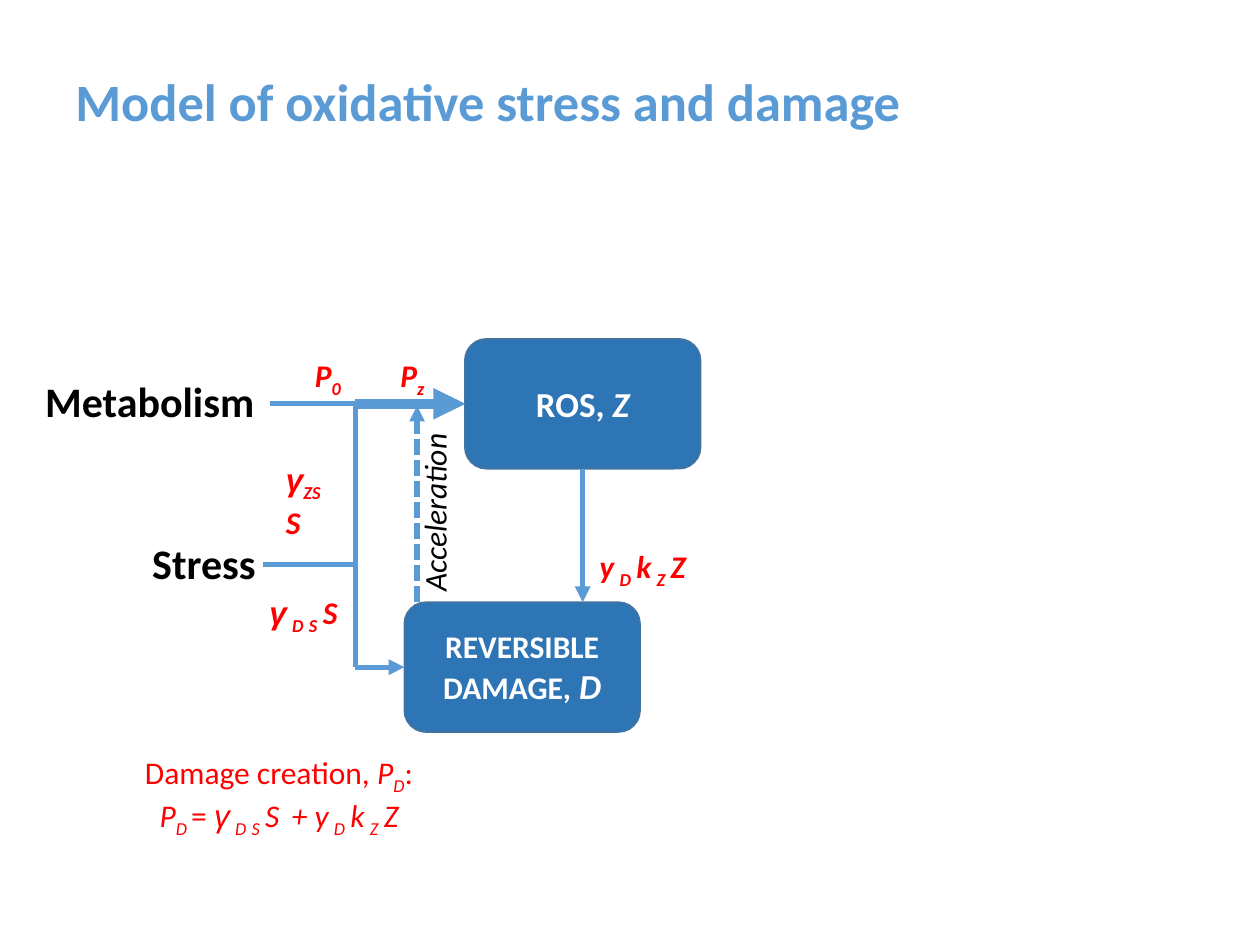
from dataclasses import dataclass, replace
from typing import Optional

from lxml.etree import SubElement
from pptx import Presentation
from pptx.dml.color import RGBColor
from pptx.enum.dml import MSO_LINE
from pptx.enum.shapes import MSO_CONNECTOR, MSO_SHAPE
from pptx.enum.text import MSO_ANCHOR, MSO_AUTO_SIZE, PP_ALIGN
from pptx.oxml.ns import qn
from pptx.shapes.autoshape import Shape
from pptx.shapes.connector import Connector
from pptx.text.text import TextFrame
from pptx.util import Inches, Pt

SKY = RGBColor(0x5B, 0x9B, 0xD5)
BLUE = RGBColor(0x2E, 0x75, 0xB6)
EDGE = RGBColor(0x43, 0x73, 0x9E)
RED = RGBColor(0xFF, 0x00, 0x00)
BLACK = RGBColor(0x00, 0x00, 0x00)
WHITE = RGBColor(0xFF, 0xFF, 0xFF)

presentation = Presentation()
presentation.slide_width, presentation.slide_height = Inches(10), Inches(7.5)
COLUMN = presentation.slide_width / 100
ROW = presentation.slide_height / 75
slide = presentation.slides.add_slide(presentation.slide_layouts[6])

TOP, LEFT, BOTTOM = 0, 1, 2
POOL_COLUMNS, POOL_ROWS = 18.7, 10.3


@dataclass(frozen=True)
class Style:
    color: RGBColor
    size: float = 18
    bold: bool = False
    italic: bool = False
    font: str = "Calibri"
    baseline: int = 0
    spacing: float = 0


@dataclass(frozen=True)
class Run:
    text: str
    style: Style


Line = list[Run]


@dataclass(frozen=True)
class Label:
    """A text box placed in grid columns and rows."""
    column: float
    row: float
    columns: float
    rows: float
    lines: list[Line]
    centred: bool = False
    wrapped: bool = False
    rotation: float = 0


@dataclass(frozen=True)
class Flow:
    """A straight line between grid points, optionally joined to a pool's side."""
    start: tuple[float, float]
    end: tuple[float, float]
    arrow: bool = False
    width: float = 3
    dashed: bool = False
    source: Optional[tuple[Shape, int]] = None
    target: Optional[tuple[Shape, int]] = None


def write(frame: TextFrame, lines: list[Line], centred: bool) -> None:
    for index, line in enumerate(lines):
        paragraph = frame.paragraphs[0] if index == 0 else frame.add_paragraph()
        paragraph.alignment = PP_ALIGN.CENTER if centred else PP_ALIGN.LEFT
        for part in line:
            run, style = paragraph.add_run(), part.style
            run.text = part.text
            run.font.name, run.font.size = style.font, Pt(style.size)
            run.font.bold, run.font.italic = style.bold, style.italic
            run.font.color.rgb = style.color
            properties = run.font._element
            if style.baseline:
                properties.set("baseline", str(style.baseline * 1000))
            if style.spacing:
                properties.set("spc", str(int(style.spacing * 100)))


def add_label(label: Label) -> Shape:
    box = slide.shapes.add_textbox(
        int(label.column * COLUMN), int(label.row * ROW),
        int(label.columns * COLUMN), int(label.rows * ROW))
    box.rotation = label.rotation
    box.text_frame.word_wrap = label.wrapped
    box.text_frame.auto_size = MSO_AUTO_SIZE.SHAPE_TO_FIT_TEXT
    write(box.text_frame, label.lines, label.centred)
    return box


def add_pool(column: float, row: float, line: Line) -> Shape:
    pool = slide.shapes.add_shape(
        MSO_SHAPE.ROUNDED_RECTANGLE, int(column * COLUMN), int(row * ROW),
        int(POOL_COLUMNS * COLUMN), int(POOL_ROWS * ROW))
    pool.shadow.inherit = False
    pool.fill.solid()
    pool.fill.fore_color.rgb = BLUE
    pool.line.color.rgb = EDGE
    pool.line.width = Pt(1)
    pool.text_frame.word_wrap = True
    pool.text_frame.vertical_anchor = MSO_ANCHOR.MIDDLE
    write(pool.text_frame, [line], centred=True)
    return pool


def add_flow(flow: Flow) -> Connector:
    (x1, y1), (x2, y2) = flow.start, flow.end
    connector = slide.shapes.add_connector(
        MSO_CONNECTOR.STRAIGHT, int(x1 * COLUMN), int(y1 * ROW),
        int(x2 * COLUMN), int(y2 * ROW))
    if flow.source:
        connector.begin_connect(*flow.source)
    if flow.target:
        connector.end_connect(*flow.target)
    connector.line.color.rgb = SKY
    connector.line.width = Pt(flow.width)
    if flow.dashed:
        connector.line.dash_style = MSO_LINE.SQUARE_DOT
    if flow.arrow:
        SubElement(connector.line._get_or_add_ln(), qn("a:tailEnd"), type="triangle")
    SubElement(connector._element.spPr, qn("a:effectLst"))
    return connector


def symbol(text: str, subscript: str, style: Style) -> Line:
    parts = [Run(text, style)]
    if subscript:
        parts.append(Run(subscript, replace(style, font="Calibri", baseline=-25)))
    return parts


def stress_term(subscript: str, style: Style) -> Line:
    return symbol("γ", subscript, replace(style, font="Arial")) + symbol("S", "", style)


def ros_term(style: Style) -> Line:
    return symbol("y", "D", style) + symbol("k", "Z", style) + symbol("Z", "", style)


heading = Style(SKY, 30, bold=True)
pool_text = Style(WHITE, 20, bold=True)
pool_symbol = replace(pool_text, italic=True)
driver = Style(BLACK, 24, bold=True)
rate = Style(RED, bold=True, italic=True)
spaced_rate = replace(rate, spacing=3)
plain = Style(RED)
formula = Style(RED, italic=True)
spaced_formula = replace(formula, spacing=3)

ros = add_pool(36.9, 26.9, [Run("ROS, ", pool_text), Run("Z", pool_symbol)])
damage = add_pool(32.1, 47.8, [
    Run("REVERSIBLE DAMAGE,", replace(pool_text, size=18)),
    Run(" ", pool_text), Run("D", pool_symbol)])

JUNCTION = 28.2
ROS_ROW = 26.9 + POOL_ROWS / 2
DAMAGE_ROW = 47.8 + POOL_ROWS / 2
STRESS_ROW = 44.8
ROS_CENTRE = 36.9 + POOL_COLUMNS / 2

for flow in (
    Flow((ROS_CENTRE, 37.2), (ROS_CENTRE, 47.8), arrow=True, source=(ros, BOTTOM)),
    Flow((JUNCTION, DAMAGE_ROW), (32.1, DAMAGE_ROW), arrow=True, target=(damage, LEFT)),
    Flow((33.1, 47.8), (33.1, 32.2), arrow=True, dashed=True),
    Flow((JUNCTION, ROS_ROW), (36.9, ROS_ROW), arrow=True, width=6, target=(ros, LEFT)),
    Flow((JUNCTION, ROS_ROW), (JUNCTION, STRESS_ROW)),
    Flow((20.9, STRESS_ROW), (JUNCTION, STRESS_ROW)),
    Flow((JUNCTION, STRESS_ROW), (JUNCTION, DAMAGE_ROW)),
    Flow((21.4, ROS_ROW), (36.9, ROS_ROW), arrow=True, target=(ros, LEFT)),
):
    add_flow(flow)

damage_creation = [
    [Run("Damage creation, ", plain), *symbol("P", "D", formula), Run(":", plain)],
    [*symbol("P", "D ", formula), Run("= ", plain),
     *stress_term("DS", spaced_formula), Run(" + ", formula), *ros_term(spaced_formula)],
]
for label in (
    Label(46.6, 42.9, 9.3, 4, [ros_term(spaced_rate)]),
    Label(20.4, 46.6, 7.5, 4, [stress_term("DS", spaced_rate)]),
    Label(24, 27.8, 4.2, 4, [symbol("P", "0", rate)]),
    Label(21.7, 36, 5.7, 4, [stress_term("ZS", rate)], wrapped=True),
    Label(30.8, 27.8, 4, 4, [symbol("P", "z", rate)]),
    Label(10.3, 59.3, 23.7, 7.1, damage_creation, centred=True),
    Label(27.1, 38.6, 14.7, 4, [[Run("Acceleration", Style(BLACK, italic=True))]], rotation=270),
    Label(2.6, 29.3, 18.8, 5, [[Run("Metabolism", driver)]]),
    Label(11.1, 42.2, 10.3, 5, [[Run("Stress", driver)]]),
):
    add_label(label)

title = add_label(Label(5, 2.5, 90, 11.6, [
    [Run("Model of oxidative stress and damage", heading)]], wrapped=True))
title.text_frame.auto_size = MSO_AUTO_SIZE.NONE
title.text_frame.vertical_anchor = MSO_ANCHOR.MIDDLE
title.text_frame.paragraphs[0].line_spacing = 0.9

presentation.save("out.pptx")
